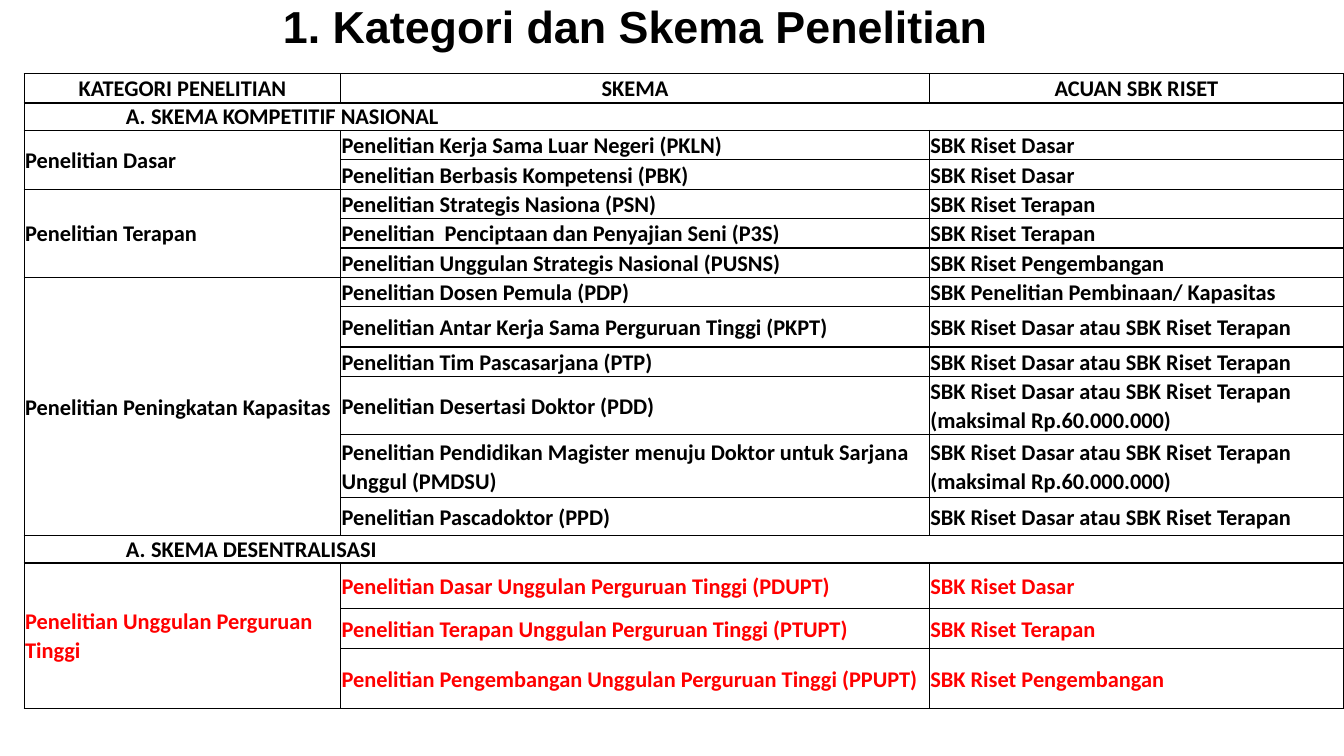
from lxml import etree
from pptx import Presentation
from pptx import util as u
from pptx.dml.color import RGBColor
from pptx.enum import text
from pptx.oxml import ns

Pt = u.Pt
BLACK = RGBColor(0, 0, 0)
RED = RGBColor(255, 0, 0)
LEFT, CENTER = text.PP_ALIGN.LEFT, text.PP_ALIGN.CENTER


def write(tf, words, size=16, font='Calibri', color=BLACK, align=LEFT, spacing=1.07):
    tf.word_wrap = True
    p = tf.paragraphs[0]
    p.alignment = align
    p.line_spacing = spacing
    r = p.add_run()
    r.text = words
    r.font.size = Pt(size)
    r.font.name = font
    r.font.bold = True
    r.font.color.rgb = color
    return p


def add_xml(parent, tag, **attrs):
    return etree.SubElement(parent, ns.qn(tag), attrs)


header = ['KATEGORI PENELITIAN', 'SKEMA', 'ACUAN SBK RISET']
dasar, terapan, pengembangan = ('SBK Riset ' + x for x in ('Dasar', 'Terapan', 'Pengembangan'))
either = 'SBK Riset Dasar atau SBK Riset Terapan'
capped = either + ' (maksimal Rp.60.000.000)'
sections = [
    ('SKEMA KOMPETITIF NASIONAL', BLACK, [
        ('Penelitian Dasar', [
            ('Penelitian Kerja Sama Luar Negeri (PKLN)', dasar),
            ('Penelitian Berbasis Kompetensi (PBK)', dasar)]),
        ('Penelitian Terapan', [
            ('Penelitian Strategis Nasiona (PSN)', terapan),
            ('Penelitian  Penciptaan dan Penyajian Seni (P3S)', terapan),
            ('Penelitian Unggulan Strategis Nasional (PUSNS)', pengembangan)]),
        ('Penelitian Peningkatan Kapasitas', [
            ('Penelitian Dosen Pemula (PDP)', 'SBK Penelitian Pembinaan/ Kapasitas'),
            ('Penelitian Antar Kerja Sama Perguruan Tinggi (PKPT)', either),
            ('Penelitian Tim Pascasarjana (PTP)', either),
            ('Penelitian Desertasi Doktor (PDD)', capped),
            ('Penelitian Pendidikan Magister menuju Doktor untuk Sarjana Unggul (PMDSU)', capped),
            ('Penelitian Pascadoktor (PPD)', either)])]),
    ('SKEMA DESENTRALISASI', RED, [
        ('Penelitian Unggulan Perguruan Tinggi', [
            ('Penelitian Dasar Unggulan Perguruan Tinggi (PDUPT)', dasar),
            ('Penelitian Terapan Unggulan Perguruan Tinggi (PTUPT)', terapan),
            ('Penelitian Pengembangan Unggulan Perguruan Tinggi (PPUPT)', pengembangan)])]),
]
widths = [226.1, 420.5, 295.9]
heights = [21, 19.4, 21, 21, 21, 21, 21, 19.4, 28.8, 19.4, 39.6, 44.6, 27.4, 19.4, 32.4, 28.8, 42.5]

prs = Presentation()
prs.slide_width, prs.slide_height = Pt(960), Pt(540)
s = prs.slides.add_slide(prs.slide_layouts[6])

tbl = s.shapes.add_table(len(heights), len(widths), Pt(17.3), Pt(52.6),
                         Pt(sum(widths)), Pt(sum(heights))).table
tbl.first_row = tbl.horz_banding = False
for col, width in zip(tbl.columns, widths):
    col.width = Pt(width)
for row, height in zip(tbl.rows, heights):
    row.height = Pt(height)

for cell in tbl.iter_cells():
    cell.margin_left = cell.margin_right = Pt(0.7)
    cell.margin_top = cell.margin_bottom = 0
    cell.vertical_anchor = text.MSO_ANCHOR.MIDDLE
    tcPr = cell._tc.get_or_add_tcPr()
    for side in ('L', 'R', 'T', 'B'):
        ln = add_xml(tcPr, 'a:ln' + side, w=str(Pt(1)))
        add_xml(add_xml(ln, 'a:solidFill'), 'a:srgbClr', val=str(BLACK))
    cell.fill.background()

for c, label in enumerate(header):
    write(tbl.cell(0, c).text_frame, label, align=CENTER)

i = 1
for section, color, groups in sections:
    p = write(tbl.cell(i, 0).text_frame, section, spacing=1.0)
    p.level = 2
    pPr = p._p.get_or_add_pPr()
    pPr.set('marL', str(Pt(90)))
    pPr.set('indent', str(Pt(-18)))
    add_xml(pPr, 'a:buFont', typeface='+mj-lt')
    add_xml(pPr, 'a:buAutoNum', type='alphaUcPeriod')
    tbl.cell(i, 0).merge(tbl.cell(i, 2))
    i += 1
    for category, schemes in groups:
        write(tbl.cell(i, 0).text_frame, category, color=color)
        tbl.cell(i, 0).merge(tbl.cell(i + len(schemes) - 1, 0))
        for scheme in schemes:
            for c, words in enumerate(scheme, 1):
                write(tbl.cell(i, c).text_frame, words, color=color)
            i += 1

title = s.shapes.add_textbox(Pt(49), 0, Pt(810), Pt(48))
write(title.text_frame, '1. Kategori dan Skema Penelitian', size=32, font='Arial',
      align=CENTER, spacing=0.9)

prs.save("out.pptx")
